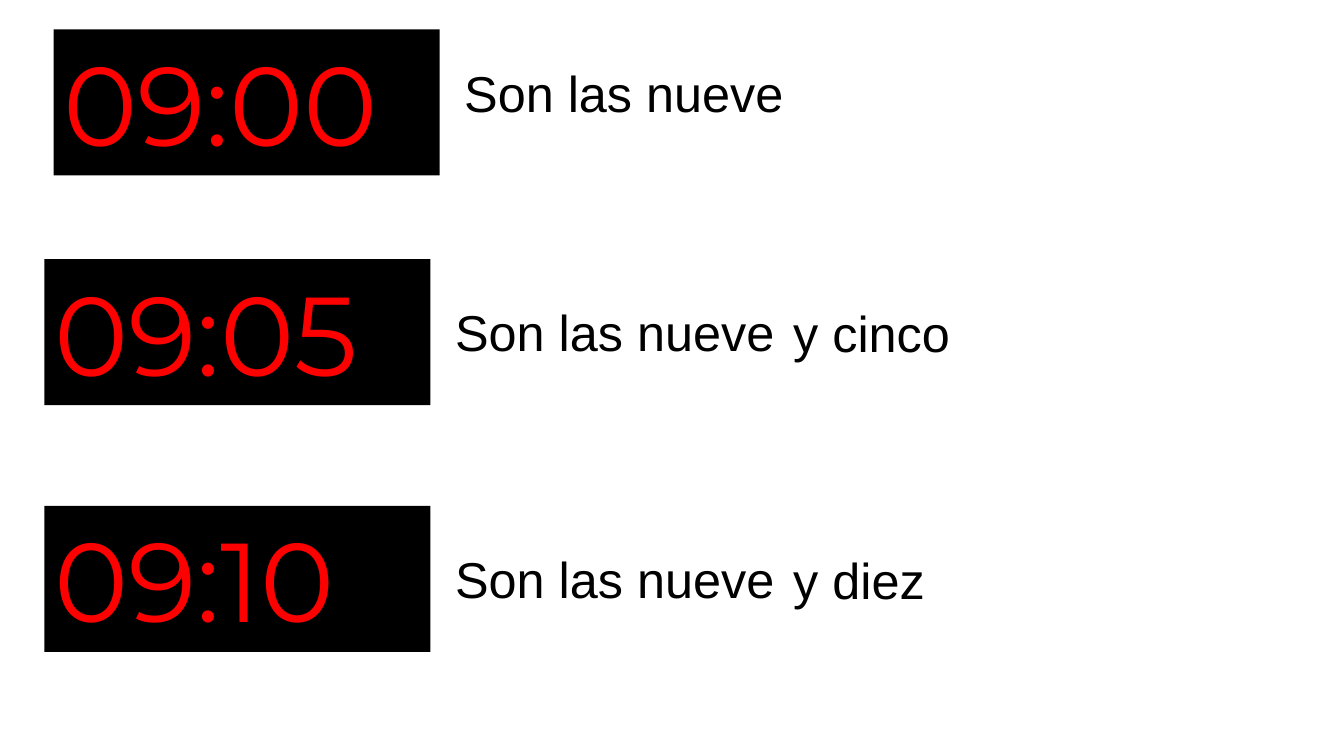
import pptx
import pptx.dml.color
import pptx.enum.shapes
import pptx.enum.text
import pptx.util

Cm = pptx.util.Cm
CLOCK_FORMAT = {"name": "Montserrat", "size": pptx.util.Pt(80)}
PHRASE_FORMAT = {"name": "Arial", "size": pptx.util.Pt(36)}


def color(hex_string):
    return pptx.dml.color.RGBColor.from_string(hex_string)


def write(shape, text, font_format, text_color):
    """Put left-aligned, top-anchored text in a shape that grows with it."""
    frame = shape.text_frame
    frame.word_wrap = True
    frame.auto_size = pptx.enum.text.MSO_AUTO_SIZE.SHAPE_TO_FIT_TEXT
    frame.vertical_anchor = pptx.enum.text.MSO_ANCHOR.TOP
    paragraph = frame.paragraphs[0]
    paragraph.alignment = pptx.enum.text.PP_ALIGN.LEFT
    run = paragraph.add_run()
    run.text = text
    for attribute, value in font_format.items():
        setattr(run.font, attribute, value)
    run.font.color.rgb = color(text_color)


presentation = pptx.Presentation()
presentation.slide_width = Cm(33.87)
presentation.slide_height = Cm(19.05)
slide = presentation.slides.add_slide(presentation.slide_layouts[6])

# time, minutes in words, clock left, clock top, phrase drop, phrase width
rows = [
    ("09:00", "", 1.35, 0.74, 0.71, 14.12),
    ("09:05", "y cinco", 1.12, 6.53, 0.94, 19.02),
    ("09:10", "y diez", 1.12, 12.75, 0.94, 19.02),
]
for time, minutes, left, top, drop, phrase_width in rows:
    clock = slide.shapes.add_shape(
        pptx.enum.shapes.MSO_SHAPE.RECTANGLE, Cm(left), Cm(top), Cm(9.73), Cm(3.68))
    clock.shadow.inherit = False
    clock.fill.solid()
    clock.fill.fore_color.rgb = color("000000")
    clock.line.fill.background()
    write(clock, time, CLOCK_FORMAT, "FF0000")

    phrase = slide.shapes.add_textbox(
        Cm(left + 10.1), Cm(top + drop), Cm(phrase_width), Cm(1.8))
    write(phrase, "Son las nueve", PHRASE_FORMAT, "000000")

    if minutes:
        ending = slide.shapes.add_textbox(
            Cm(left + 18.62), Cm(top + drop + 0.03), Cm(5.16), Cm(1.8))
        write(ending, minutes, PHRASE_FORMAT, "000000")

presentation.save("out.pptx")
